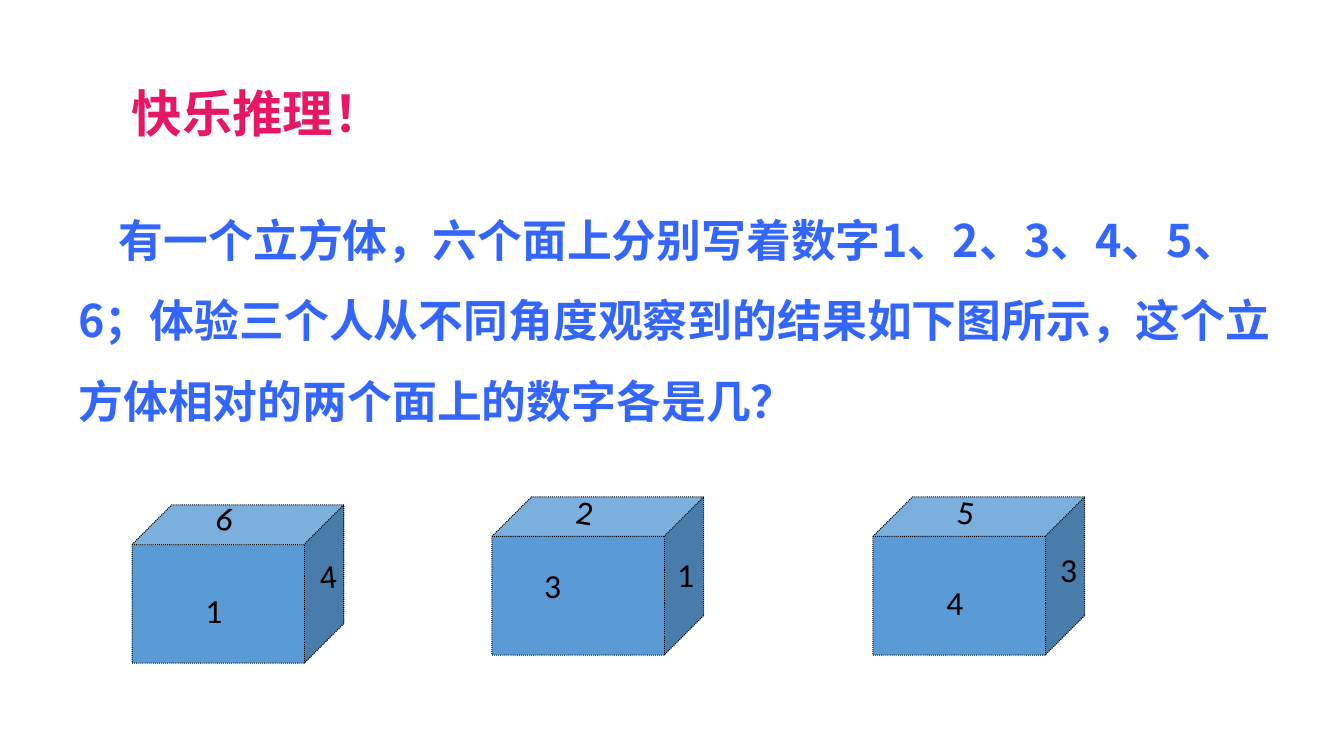
from pptx import Presentation
from pptx.dml.color import RGBColor
from pptx.enum.dml import MSO_LINE
from pptx.enum.shapes import MSO_SHAPE
from pptx.enum.text import MSO_ANCHOR, MSO_AUTO_SIZE, PP_ALIGN
from pptx.oxml.ns import qn
from pptx.util import Inches, Pt
from lxml import etree

CUBE = MSO_SHAPE.CUBE
DOTS = MSO_LINE.ROUND_DOT
TOP, MID = MSO_ANCHOR.TOP, MSO_ANCHOR.MIDDLE
FIXED = MSO_AUTO_SIZE.NONE
LEFT, CENTER = PP_ALIGN.LEFT, PP_ALIGN.CENTER

COLORS = {"title": "E81766", "body": "3366FF", "cube": "5B9BD5", "ink": "000000"}
HAN, LATIN = "Noto Sans CJK SC", "Calibri"
COLS, ROWS = 160, 90

TITLE = "快乐推理！"
BODY = ("有一个立方体，六个面上分别写着数字1、2、3、4、5、6；"
        "体验三个人从不同角度观察到的结果如下图所示，"
        "这个立方体相对的两个面上的数字各是几？")
CUBES = [
    (15.72, 60.12, [("6", 8.88, -0.96, 14.4), ("1", 7.56, 9.48, 0), ("4", 21.12, 5.16, -5.2)]),
    (58.56, 59.16, [("2", 8.88, -0.96, 8.8), ("3", 5.04, 7.56, 0), ("1", 20.88, 6.24, 0)]),
    (103.92, 59.16, [("5", 8.88, -0.96, 8.3), ("4", 7.56, 9.48, 0), ("3", 21.12, 5.64, 0)]),
]


class Deck:
    """Hold the style and the current slide, and draw on a grid of cells."""

    def __init__(self):
        self.prs = Presentation()
        self.prs.slide_width = Inches(13.33)
        self.prs.slide_height = Inches(7.5)
        self.slide = self.prs.slides.add_slide(self.prs.slide_layouts[5])

    def place(self, x, y, w, h):
        col = self.prs.slide_width / COLS
        row = self.prs.slide_height / ROWS
        return [round(n) for n in (x * col, y * row, w * col, h * row)]

    def label(self, shape, text, size, color, font, bold=False,
              align=LEFT, anchor=TOP, wrap=True):
        frame = shape.text_frame
        frame.text = text
        frame.auto_size = FIXED
        frame.word_wrap = wrap
        frame.vertical_anchor = anchor
        para = frame.paragraphs[0]
        para.alignment = align
        run = para.runs[0]
        run.font.size = Pt(size)
        run.font.bold = bold
        run.font.name = font
        run.font.color.rgb = RGBColor.from_string(COLORS[color])
        props = run._r.get_or_add_rPr()
        etree.SubElement(props, qn("a:ea")).set("typeface", font)
        return para

    def title(self, text, *spot):
        shape = self.slide.shapes.title
        shape.left, shape.top, shape.width, shape.height = self.place(*spot)
        self.label(shape, text, 36, "title", HAN, True, CENTER, wrap=False)

    def body(self, text, *spot):
        box = self.slide.shapes.add_textbox(*self.place(*spot))
        para = self.label(box, text, 32, "body", HAN, True, anchor=MID)
        para.line_spacing = 1.5
        para._p.get_or_add_pPr().set("indent", str(Inches(0.4)))

    def digit(self, text, x, y, turn):
        box = self.slide.shapes.add_textbox(*self.place(x, y, 8.76, 6))
        box.rotation = turn
        self.label(box, text, 24, "ink", LATIN)

    def cube(self, x, y, faces):
        shape = self.slide.shapes.add_shape(CUBE, *self.place(x, y, 25.2, 18.84))
        shape.shadow.inherit = False
        shape.adjustments[0] = 0.25
        shape.fill.solid()
        shape.fill.fore_color.rgb = RGBColor.from_string(COLORS["cube"])
        shape.line.color.rgb = RGBColor.from_string(COLORS["ink"])
        shape.line.width = Pt(0.75)
        shape.line.dash_style = DOTS
        for text, dx, dy, turn in faces:
            self.digit(text, x + dx, y + dy, turn)


def main():
    deck = Deck()
    deck.title(TITLE, 10.68, 9.12, 40, 6)
    deck.body(BODY, 8.16, 21.36, 144.84, 30.24)
    for x, y, faces in CUBES:
        deck.cube(x, y, faces)
    deck.prs.save("out.pptx")


if __name__ == "__main__":
    main()
